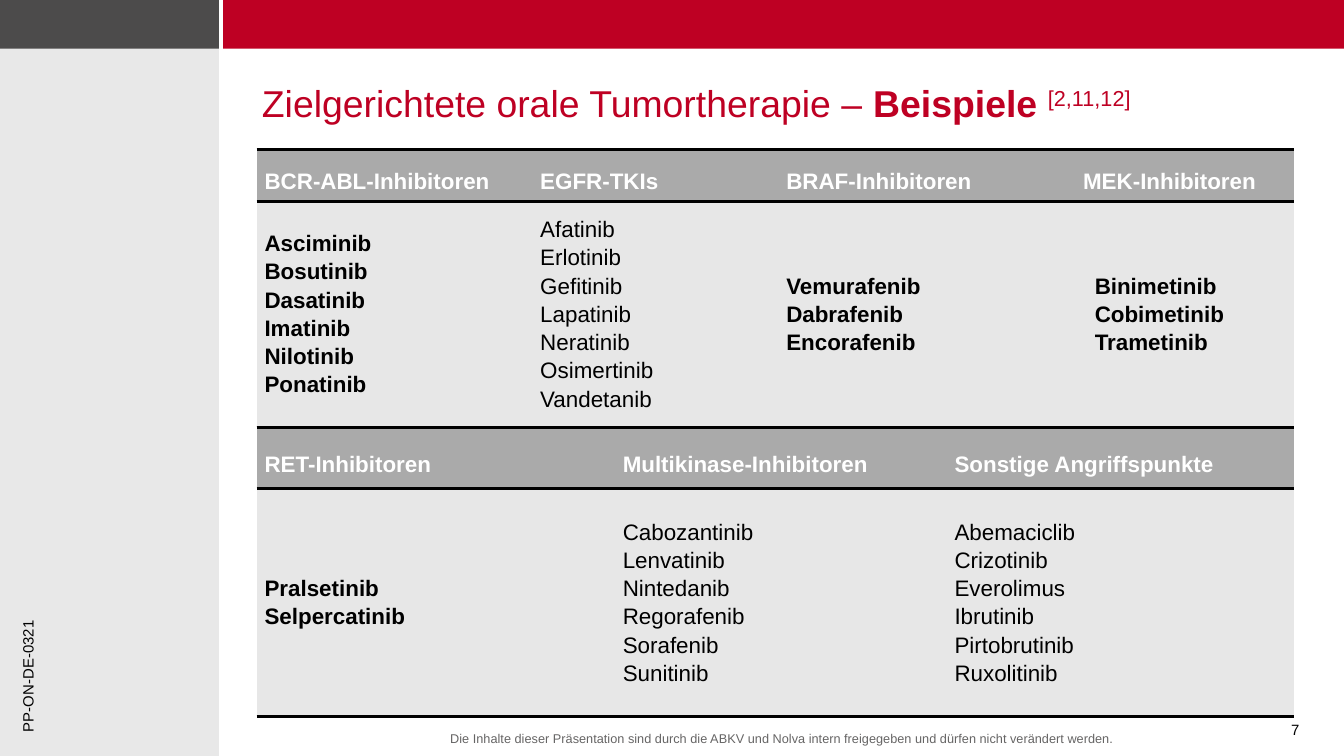
from dataclasses import dataclass

from lxml import etree
from pptx import Presentation
from pptx.dml.color import RGBColor
from pptx.enum.shapes import MSO_SHAPE
from pptx.enum.text import MSO_ANCHOR, PP_ALIGN
from pptx.oxml.ns import qn
from pptx.util import Cm, Pt

RECTANGLE = MSO_SHAPE.RECTANGLE
TOP, MIDDLE = MSO_ANCHOR.TOP, MSO_ANCHOR.MIDDLE
LEFT, CENTER, RIGHT = PP_ALIGN.LEFT, PP_ALIGN.CENTER, PP_ALIGN.RIGHT
PLAIN_TABLE_STYLE = "{2D5ABB26-0587-4C30-8999-92F81FD0307C}"


@dataclass(frozen=True)
class Theme:
    font: str = "Arial"
    red: str = "BE0023"
    dark: str = "4C4B4B"
    panel: str = "BEBEBE"
    head_fill: str = "AAAAAA"
    body_fill: str = "E7E7E7"
    white: str = "FFFFFF"
    black: str = "000000"
    footer: str = "666565"
    title_size: float = 20
    table_size: float = 12
    small_size: float = 8
    footer_size: float = 6.8
    rule_width: float = 2


THEME = Theme()

# Title spans: text, bold, superscript
TITLE = [
    ("Zielgerichtete orale Tumortherapie – ", False, False),
    ("Beispiele ", True, False),
    ("[2,11,12]", False, True),
]

# Bars: left, top, width, height (cm), colour, opacity in percent
BARS = [
    (0, 0.84, 4.14, 13.45, THEME.panel, 35),
    (0, 0, 4.14, 0.92, THEME.dark, 100),
    (4.22, 0, 21.18, 0.92, THEME.red, 100),
]

# Labels: text, (left, top, width, height) in cm, size, colour, alignment, vertical
LABELS = [
    ("Die Inhalte dieser Präsentation sind durch die ABKV und Nolva intern "
     "freigegeben und dürfen nicht verändert werden.",
     (4.14, 13.69, 21.28, 0.84), THEME.footer_size, THEME.footer, CENTER, False),
    ("PP-ON-DE-0321", (0.23, 8.81, 0.84, 5.28),
     THEME.small_size, THEME.black, LEFT, True),
    ("7", (22.91, 13.49, 1.9, 0.64), THEME.small_size, THEME.black, RIGHT, False),
]

# A tab splits the last column of the first table into two lists.
TABLES = [
    {
        "top": 2.82, "widths": [5.21, 4.65, 9.75], "heights": [0.99, 4.27],
        "columns": [
            ("BCR-ABL-Inhibitoren", True,
             ["Asciminib", "Bosutinib", "Dasatinib", "Imatinib", "Nilotinib",
              "Ponatinib"]),
            ("EGFR-TKIs", False,
             ["Afatinib", "Erlotinib", "Gefitinib", "Lapatinib", "Neratinib",
              "Osimertinib", "Vandetanib"]),
            ("BRAF-Inhibitoren\tMEK-Inhibitoren", True,
             ["Vemurafenib\tBinimetinib", "Dabrafenib\tCobimetinib",
              "Encorafenib\tTrametinib"]),
        ],
    },
    {
        "top": 8.08, "widths": [6.77, 6.27, 6.57], "heights": [1.16, 4.31],
        "columns": [
            ("RET-Inhibitoren", True, ["Pralsetinib", "Selpercatinib"]),
            ("Multikinase-Inhibitoren", False,
             ["Cabozantinib", "Lenvatinib", "Nintedanib", "Regorafenib",
              "Sorafenib", "Sunitinib"]),
            ("Sonstige Angriffspunkte", False,
             ["Abemaciclib", "Crizotinib", "Everolimus", "Ibrutinib",
              "Pirtobrutinib", "Ruxolitinib"]),
        ],
    },
]
TABLE_LEFT = 4.85
HEAD_TAB, BODY_TAB = 5.61, 5.83


def add_span(para, text, size, color, bold=False):
    span = para.add_run()
    span.text = text
    span.font.name = THEME.font
    span.font.size = Pt(size)
    span.font.bold = bold
    span.font.color.rgb = RGBColor.from_string(color)
    return span


def add_bar(page, left, top, width, height, color, opacity):
    bar = page.shapes.add_shape(RECTANGLE, Cm(left), Cm(top), Cm(width), Cm(height))
    bar.shadow.inherit = False
    bar.line.fill.background()
    bar.fill.solid()
    bar.fill.fore_color.rgb = RGBColor.from_string(color)
    if opacity < 100:
        tint = next(bar.fill._xPr.iter(qn("a:srgbClr")))
        etree.SubElement(tint, qn("a:alpha"), val=str(opacity * 1000))


def add_label(page, text, place, size, color, alignment, vertical):
    box = page.shapes.add_textbox(*map(Cm, place))
    box.text_frame.word_wrap = True
    if vertical:
        box.text_frame._txBody.bodyPr.set("vert", "vert270")
    para = box.text_frame.paragraphs[0]
    para.alignment = alignment
    add_span(para, text, size, color)


def fill_title(title):
    title.left, title.top, title.width, title.height = map(Cm, (4.95, 1.52, 18.62, 1.37))
    frame = title.text_frame
    frame.margin_left = frame.margin_right = frame.margin_top = frame.margin_bottom = 0
    frame.vertical_anchor = TOP
    frame.word_wrap = True
    para = frame.paragraphs[0]
    para.alignment = LEFT
    for text, bold, raised in TITLE:
        span = add_span(para, text, THEME.title_size, THEME.red, bold)
        if raised:
            span.font._element.set("baseline", "30000")


def add_tab_stop(para, position):
    tabs = etree.SubElement(para._p.get_or_add_pPr(), qn("a:tabLst"))
    etree.SubElement(tabs, qn("a:tab"), pos=str(Cm(position)), algn="l")


def rule_cell(cell):
    """Draw the rules above and below a cell."""
    properties = cell._tc.get_or_add_tcPr()
    for index, side in enumerate(("a:lnT", "a:lnB")):
        line = etree.Element(qn(side), w=str(Pt(THEME.rule_width)))
        solid = etree.SubElement(line, qn("a:solidFill"))
        etree.SubElement(solid, qn("a:srgbClr"), val=THEME.black)
        properties.insert(index, line)


def fill_cell(cell, lines, fill, color, bold, tab, is_head):
    cell.margin_left = cell.margin_right = Cm(0.15)
    cell.margin_top = cell.margin_bottom = Cm(0.08)
    cell.vertical_anchor = MIDDLE
    cell.fill.solid()
    cell.fill.fore_color.rgb = RGBColor.from_string(fill)
    rule_cell(cell)
    frame = cell.text_frame
    for index, line in enumerate(lines):
        para = frame.add_paragraph() if index else frame.paragraphs[0]
        if "\t" in line:
            add_tab_stop(para, tab)
        if is_head:
            para.line_spacing = Pt(20)
        if index:
            para.space_before = Pt(1.7)
        add_span(para, line, THEME.table_size, color, bold)


def add_drug_table(page, top, widths, heights, columns):
    frame = page.shapes.add_table(2, len(columns), Cm(TABLE_LEFT), Cm(top),
                                  Cm(sum(widths)), Cm(sum(heights)))
    table = frame.table
    table.first_row = table.horz_banding = False
    table._tbl.tblPr.find(qn("a:tableStyleId")).text = PLAIN_TABLE_STYLE
    for row, height in zip(table.rows, heights):
        row.height = Cm(height)
    for index, (head, bold, drugs) in enumerate(columns):
        table.columns[index].width = Cm(widths[index])
        fill_cell(table.cell(0, index), [head], THEME.head_fill, THEME.white,
                  True, HEAD_TAB, True)
        fill_cell(table.cell(1, index), drugs, THEME.body_fill, THEME.black,
                  bold, BODY_TAB, False)


def main():
    deck = Presentation()
    deck.slide_width, deck.slide_height = Cm(25.4), Cm(14.29)
    page = deck.slides.add_slide(deck.slide_layouts[5])
    for bar in BARS:
        add_bar(page, *bar)
    fill_title(page.shapes.title)
    for label in LABELS:
        add_label(page, *label)
    for table in TABLES:
        add_drug_table(page, **table)
    deck.save("out.pptx")


if __name__ == "__main__":
    main()
